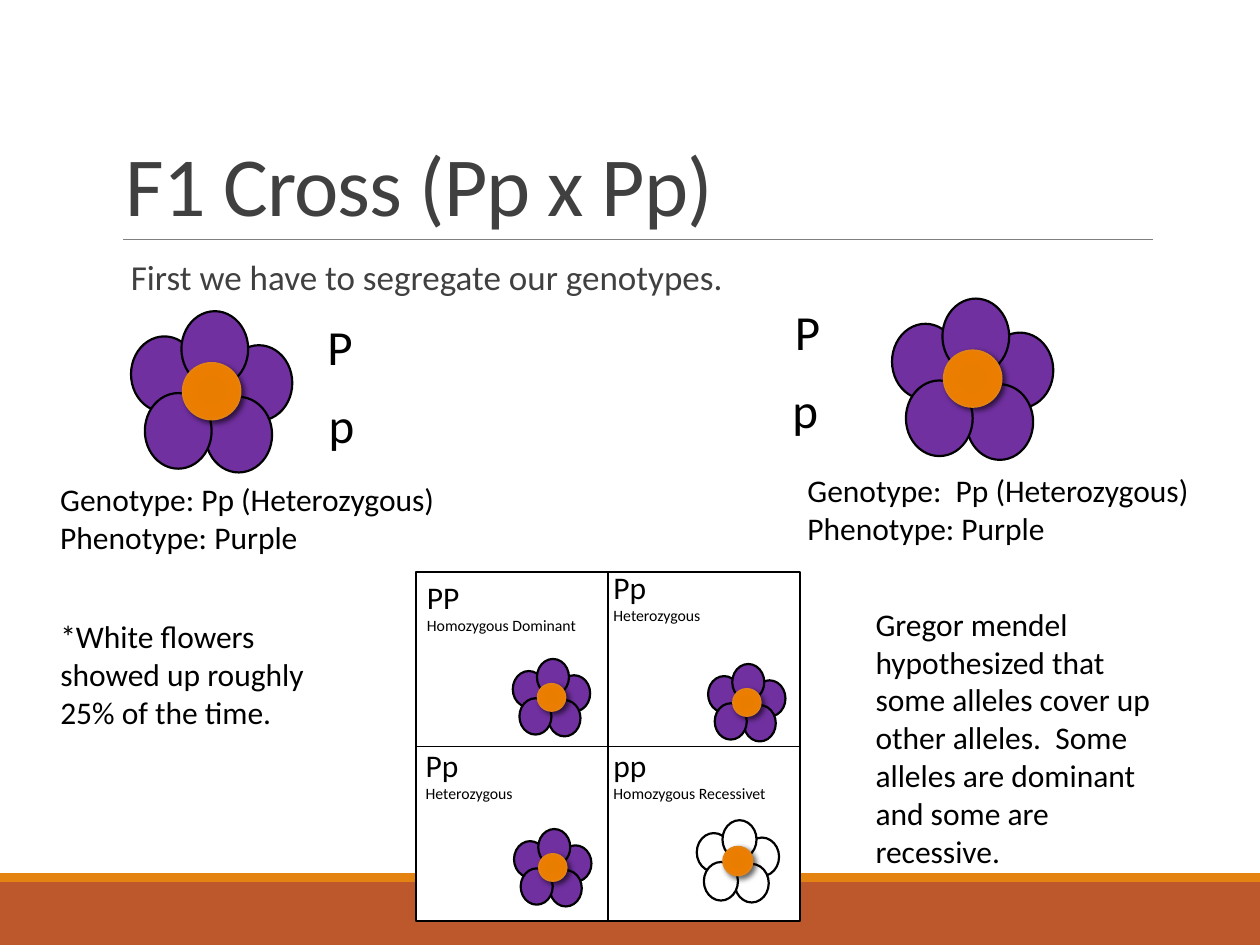
import pptx
import pptx.util
import pptx.dml.color
import pptx.enum.shapes
import pptx.enum.text
import pptx.oxml
import pptx.oxml.ns
from lxml import etree

Inches, Pt = pptx.util.Inches, pptx.util.Pt
RGBColor = pptx.dml.color.RGBColor
SHAPES = pptx.enum.shapes.MSO_SHAPE
STRAIGHT = pptx.enum.shapes.MSO_CONNECTOR.STRAIGHT
AUTO_SIZE = pptx.enum.text.MSO_AUTO_SIZE
NAMESPACE = pptx.oxml.ns.nsdecls("a")

BLACK = RGBColor(0x00, 0x00, 0x00)
WHITE = RGBColor(0xFF, 0xFF, 0xFF)
GRAY = RGBColor(0x80, 0x80, 0x80)
DARK = RGBColor(0x40, 0x40, 0x40)
PURPLE = RGBColor(0x70, 0x30, 0xA0)
ORANGE = RGBColor(0xE4, 0x83, 0x12)
RUST = RGBColor(0xBD, 0x58, 0x2C)

# Content: left, top, width, height, then lines of (text, size)
TITLE = (0.9, 0.31, 8.25, 1.59, [("F1 Cross (Pp x Pp)", 48)])
LEAD = (0.9, 2.02, 8.25, 4.4, [("First we have to segregate our genotypes.", 20)])
NOTES = [
    (0.38, 3.76, 3.34, 0.71, [("Genotype: Pp (Heterozygous) Phenotype: Purple", 18)]),
    (6.31, 3.69, 3.32, 0.71, [("Genotype:  Pp (Heterozygous)", 18),
                              ("Phenotype: Purple", 18)]),
    (0.38, 4.85, 2.52, 1.01, [("*White flowers showed up roughly 25% of the time.", 18)]),
    (6.85, 4.75, 2.52, 2.22, [("Gregor mendel hypothesized that some alleles cover up "
                               "other alleles.  Some alleles are dominant and some "
                               "are recessive.", 18)]),
]
ALLELES = [("P", 2.5, 2.46), ("P", 6.21, 2.34), ("p", 2.51, 3.08), ("p", 6.19, 2.96)]
OFFSPRING = [
    ("PP", "Homozygous Dominant", 3.29, 4.54),
    ("pp", "Homozygous Recessivet", 4.77, 5.87),
    ("Pp", "Heterozygous", 4.77, 4.46),
    ("Pp", "Heterozygous", 3.28, 5.87),
]
SQUARE = (3.3, 4.54, 3.05, 2.77)

# Flowers: left, top, scale, petal colour
FLOWERS = [
    (1.04, 2.47, 1, PURPLE), (7.08, 2.37, 1, PURPLE),
    (4.07, 5.23, 0.48, PURPLE), (5.62, 5.27, 0.48, PURPLE),
    (4.08, 6.58, 0.48, PURPLE), (5.53, 6.51, 0.51, WHITE),
]
PETALS = [(0, 0.2), (0.75, 0.27), (0.59, 0.68), (0.11, 0.65), (0.4, 0)]
PETAL_SIZE = (0.53, 0.6)
CENTER = (0.41, 0.41, 0.46, 0.45)
CENTER_STOPS = [(0, "E57B00"), (34, "E87D00"), (70, "EB7E00"), (100, "EF8407")]


def add_solid(shapes, kind, place, fill, line=None, width=1.25):
    shape = shapes.add_shape(kind, *map(Inches, place))
    shape.shadow.inherit = False
    shape.fill.solid()
    shape.fill.fore_color.rgb = fill
    if line is None:
        shape.line.fill.background()
    else:
        shape.line.color.rgb = line
        shape.line.width = Pt(width)
    return shape


def add_line(shapes, start, end, color, width):
    line = shapes.add_connector(STRAIGHT, *map(Inches, start + end))
    line.line.color.rgb = color
    line.line.width = Pt(width)
    etree.SubElement(line._element.spPr, pptx.oxml.ns.qn("a:effectLst"))


def add_text(shapes, left, top, width, height, lines, color=BLACK, grow=True):
    box = shapes.add_textbox(*map(Inches, (left, top, width, height)))
    frame = box.text_frame
    frame.text = "\n".join(text for text, size in lines)
    frame.word_wrap = True
    frame.auto_size = AUTO_SIZE.SHAPE_TO_FIT_TEXT if grow else AUTO_SIZE.NONE
    for paragraph, (text, size) in zip(frame.paragraphs, lines):
        for span in paragraph.runs:
            span.font.name = "Calibri"
            span.font.size = Pt(size)
            span.font.color.rgb = color
    return frame


def style_center(center):
    """Circular gradient and a soft shadow."""
    stops = "".join(f'<a:gs pos="{pos * 1000}"><a:srgbClr val="{color}"/></a:gs>'
                    for pos, color in CENTER_STOPS)
    gradient = pptx.oxml.parse_xml(
        f'<a:gradFill {NAMESPACE}><a:gsLst>{stops}</a:gsLst><a:path path="circle">'
        '<a:fillToRect l="100000" t="100000" r="100000" b="100000"/></a:path></a:gradFill>')
    shadow = pptx.oxml.parse_xml(
        f'<a:outerShdw {NAMESPACE} blurRad="{Pt(3)}" dist="{Pt(2)}" dir="2700000">'
        '<a:srgbClr val="000000"><a:alpha val="60000"/></a:srgbClr></a:outerShdw>')
    properties = center._element.spPr
    solid = properties.find(pptx.oxml.ns.qn("a:solidFill"))
    properties.replace(solid, gradient)
    properties.find(pptx.oxml.ns.qn("a:effectLst")).append(shadow)


def add_flower(page, left, top, scale, color):
    group = page.shapes.add_group_shape()

    def place(x, y, width, height):
        return (left + x * scale, top + y * scale, width * scale, height * scale)

    for petal in PETALS:
        add_solid(group.shapes, SHAPES.OVAL, place(*petal, *PETAL_SIZE), color, BLACK)
    style_center(add_solid(group.shapes, SHAPES.OVAL, place(*CENTER), ORANGE, ORANGE, 1))


def add_heading(page):
    frame = add_text(page.shapes, *TITLE, color=DARK, grow=False)
    frame.vertical_anchor = pptx.enum.text.MSO_ANCHOR.BOTTOM
    frame.paragraphs[0].line_spacing = 0.85
    frame.paragraphs[0].runs[0].font._element.set("spc", "-50")

    frame = add_text(page.shapes, *LEAD, color=DARK, grow=False)
    frame.margin_left = frame.margin_right = 0
    paragraph = frame.paragraphs[0]
    paragraph.line_spacing = 0.9
    paragraph.space_before, paragraph.space_after = Pt(12), Pt(2)
    properties = paragraph._p.get_or_add_pPr()
    properties.set("marL", str(Inches(0.1)))
    properties.set("indent", str(Inches(-0.1)))
    properties.append(pptx.oxml.parse_xml(f'<a:buChar {NAMESPACE} char=" "/>'))


def add_square(page):
    left, top, width, height = SQUARE
    group = page.shapes.add_group_shape()
    add_solid(group.shapes, SHAPES.RECTANGLE, SQUARE, WHITE, BLACK)
    middle, center = left + width / 2, top + height / 2
    add_line(group.shapes, (middle, top), (middle, top + height), BLACK, 1)
    add_line(group.shapes, (left, center), (left + width, center), BLACK, 1)


def main():
    deck = pptx.Presentation()
    deck.slide_width, deck.slide_height = Inches(10), Inches(7.5)
    page = deck.slides.add_slide(deck.slide_layouts[6])

    # Footer bands and title rule
    add_solid(page.shapes, SHAPES.RECTANGLE, (0, 7, 10, 0.5), RUST)
    add_solid(page.shapes, SHAPES.RECTANGLE, (0, 6.93, 10, 0.07), ORANGE)
    add_line(page.shapes, (0.98, 1.9), (9.15, 1.9), GRAY, 0.5)
    add_heading(page)

    # Punnett square and flowers
    add_square(page)
    for flower in FLOWERS:
        add_flower(page, *flower)

    # Labels
    for note in NOTES:
        add_text(page.shapes, *note)
    for allele, left, top in ALLELES:
        add_text(page.shapes, left, top, 0.39, 0.57, [(allele, 28)])
    for genotype, kind, left, top in OFFSPRING:
        add_text(page.shapes, left, top, 1.52, 0.56, [(genotype, 18), (kind, 9)])

    deck.save("out.pptx")


if __name__ == "__main__":
    main()
